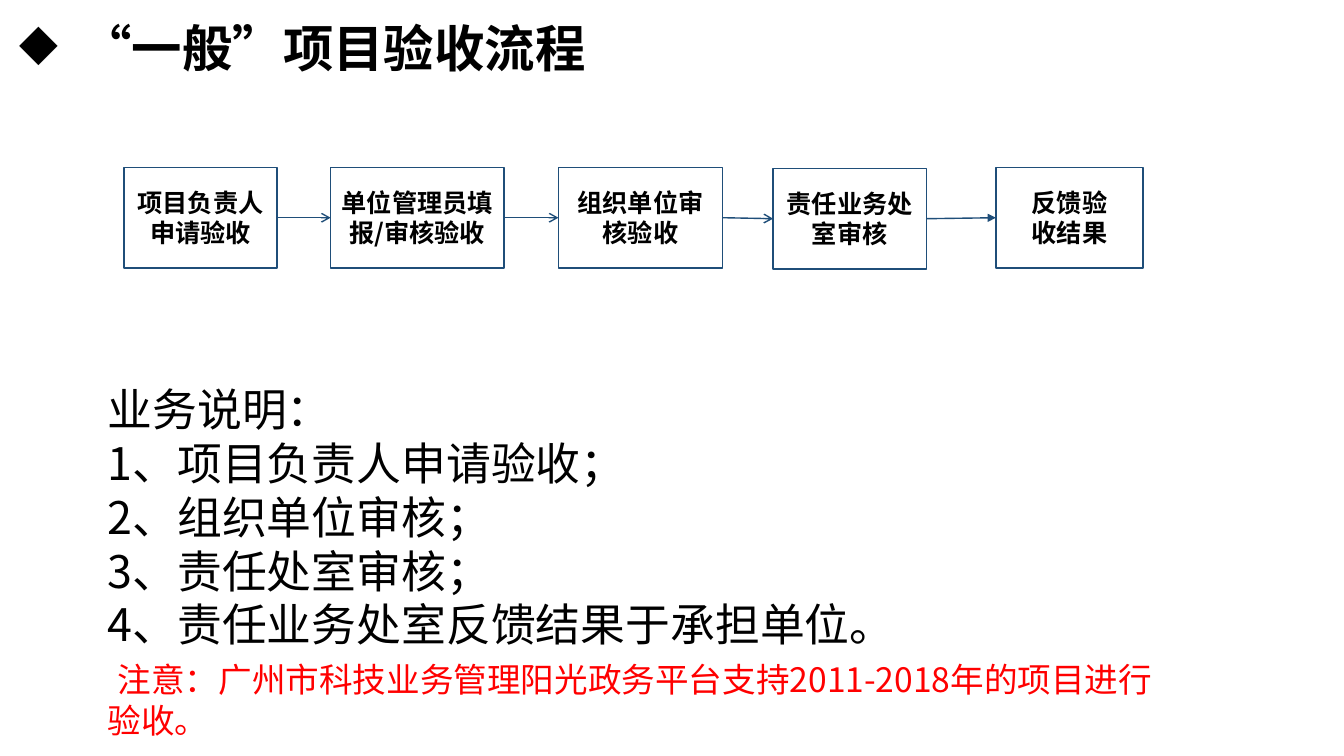
from dataclasses import dataclass
from itertools import pairwise

from lxml.etree import SubElement as Sub
from pptx import Presentation
from pptx.dml.color import RGBColor as Rgb
from pptx.enum.shapes import MSO_CONNECTOR as Link, MSO_SHAPE as Kind
from pptx.enum.text import MSO_ANCHOR as Anchor, PP_ALIGN as Align
from pptx.oxml.ns import qn
from pptx.util import Inches, Pt

FONT = "Noto Sans CJK SC"
BLACK, WHITE, BLUE, RED = "000000", "FFFFFF", "1F4E79", "FF0000"


@dataclass(frozen=True)
class Step:
    """One box of the flow, placed in grid cells, with the arrowhead that leads to it."""
    lines: tuple[str, ...]
    col: float
    cols: float
    row: float = 16.6
    head: str = "arrow"


STEPS = [
    Step(("项目负责人申请验收",), 12.3, 15.2),
    Step(("单位管理员填报/审核验收",), 32.8, 17.2),
    Step(("组织单位审核验收",), 55.4, 16.3),
    Step(("责任业务处", "室审核"), 76.7, 15.2, 16.7),
    Step(("反馈验", "收结果"), 98.8, 14.6, head="triangle"),
]
NOTES = [
    "业务说明：",
    "1、项目负责人申请验收；",
    "2、组织单位审核；",
    "3、责任处室审核；",
    "4、责任业务处室反馈结果于承担单位。",
]
ALERT = "注意：广州市科技业务管理阳光政务平台支持2011-2018年的项目进行验收。"


def cells(count: float) -> int:
    """Turn grid cells of a tenth of an inch into a length."""
    return Inches(count / 10)


def paint(tone: str) -> Rgb:
    """Turn a hex string into a colour."""
    return Rgb.from_string(tone)


def style(para, size: float, tone: str = BLACK, bold: bool = False) -> None:
    """Set the font of a whole paragraph, Chinese glyphs included."""
    font = para.font
    font.size, font.bold, font.name = Pt(size), bold, FONT
    font.color.rgb = paint(tone)
    face = Sub(para._p.pPr.find(qn("a:defRPr")), qn("a:ea"))
    face.set("typeface", FONT)


def indent(para, left: float, first: float) -> None:
    """Set the left margin and first line indent in grid cells."""
    props = para._p.get_or_add_pPr()
    props.set("marL", str(cells(left)))
    props.set("indent", str(cells(first)))


def fill(frame, lines) -> list:
    """Write one paragraph per line and return them."""
    frame.text = "\n".join(lines)
    return list(frame.paragraphs)


def box(slide, step: Step):
    """Draw one step of the flow."""
    shape = slide.shapes.add_shape(
        Kind.RECTANGLE, cells(step.col), cells(step.row), cells(step.cols), cells(10))
    shape.shadow.inherit = False
    shape.fill.solid()
    shape.fill.fore_color.rgb = paint(WHITE)
    shape.line.color.rgb = paint(BLUE)
    shape.line.width = Pt(1)
    frame = shape.text_frame
    frame.word_wrap, frame.vertical_anchor = True, Anchor.MIDDLE
    for para in fill(frame, step.lines):
        para.alignment = Align.CENTER
        style(para, 18, bold=True)
    return shape


def join(slide, start, end, head: str) -> None:
    """Lead an arrow from the right side of one box to the left side of the next."""
    line = slide.shapes.add_connector(Link.STRAIGHT, 0, 0, 0, 0)
    line.begin_connect(start, 3)
    line.end_connect(end, 1)
    line.line.color.rgb = paint(BLUE)
    line.line.width = Pt(1)
    Sub(line.line._get_or_add_ln(), qn("a:tailEnd")).set("type", head)
    Sub(line._element.spPr, qn("a:effectLst"))


def title(slide) -> None:
    """Write the heading with its diamond bullet."""
    text = slide.shapes.add_textbox(cells(0.9), cells(1.2), cells(58.5), cells(7.1))
    text.text_frame.word_wrap = False
    para, = fill(text.text_frame, ["“一般”项目验收流程"])
    indent(para, 6.2, -6.2)
    Sub(para._p.pPr, qn("a:buChar")).set("char", "◆")
    style(para, 36, bold=True)


def notes(slide) -> None:
    """Write the notes and the red alert below them."""
    text = slide.shapes.add_textbox(cells(9.7), cells(37.4), cells(108.7), cells(37.3))
    text.text_frame.word_wrap = True
    *paras, last = fill(text.text_frame, [*NOTES, ALERT])
    for para in paras:
        style(para, 32)
    indent(last, 0, 1)
    last.space_before = Pt(6)
    style(last, 24, RED)


def main() -> None:
    """Build the slide and save it."""
    deck = Presentation()
    deck.slide_width, deck.slide_height = cells(133.33), cells(75)
    slide = deck.slides.add_slide(deck.slide_layouts[6])
    title(slide)
    boxes = [box(slide, step) for step in STEPS]
    for (start, end), step in zip(pairwise(boxes), STEPS[1:]):
        join(slide, start, end, step.head)
    notes(slide)
    deck.save("out.pptx")


if __name__ == "__main__":
    main()
